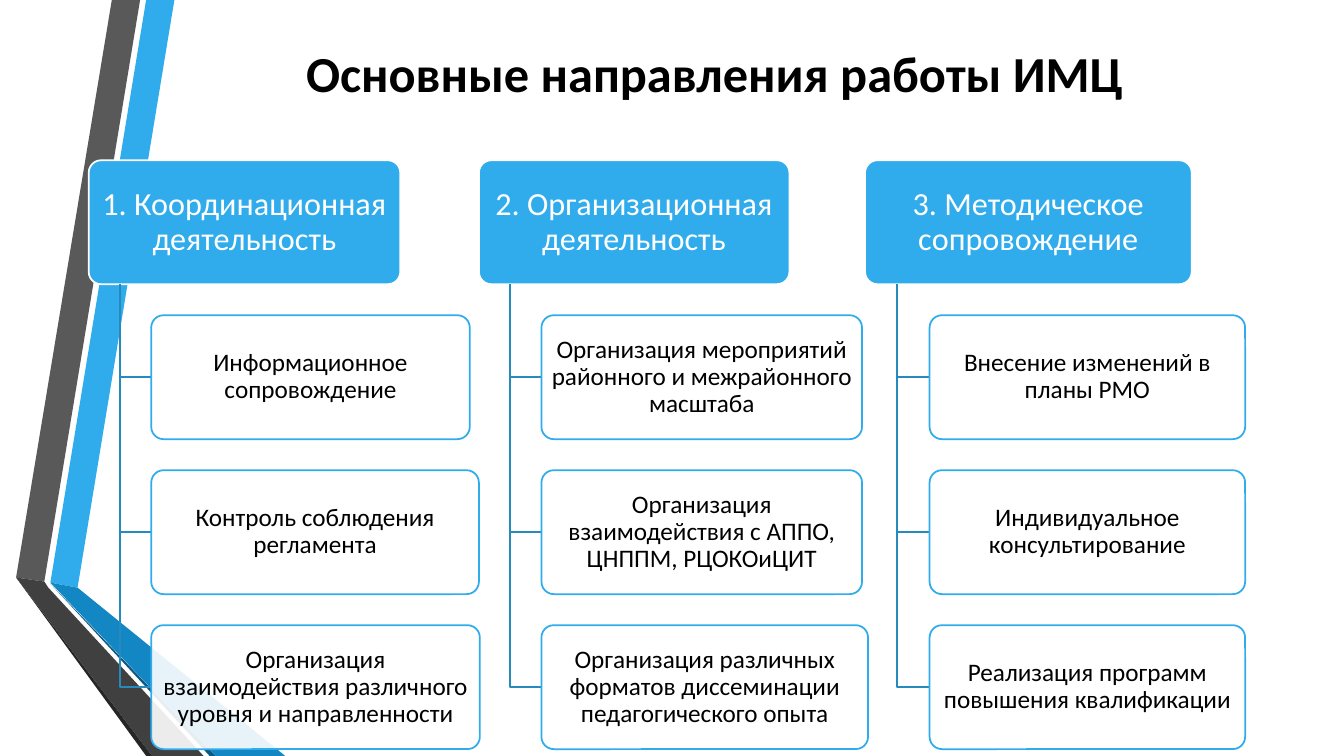
import pptx
import pptx.util
import pptx.dml.color
import pptx.enum.shapes
import pptx.enum.text
import pptx.oxml
import pptx.oxml.ns
from dataclasses import dataclass
from lxml import etree

Inches = pptx.util.Inches
Pt = pptx.util.Pt


@dataclass(frozen=True)
class Theme:
    font: str = "Calibri"
    title_size: int = 36
    heading_size: int = 23
    task_size: int = 18
    line_width: float = 1.25
    black: str = "000000"
    white: str = "FFFFFF"
    blue: str = "30ACEC"
    blue_dark: str = "1287C3"
    blue_deep: str = "0C5A82"
    branch: str = "268ABD"
    gray: str = "595959"
    gray_dark: str = "404040"
    gray_deep: str = "262626"


theme = Theme()
rgb = pptx.dml.color.RGBColor.from_string

deck = pptx.Presentation()
deck.slide_width, deck.slide_height = Inches(13.33), Inches(7.5)
slide = deck.slides.add_slide(deck.slide_layouts[6])


def add_outline(points, closed):
    corners = [(Inches(x), Inches(y)) for x, y in points]
    builder = slide.shapes.build_freeform(*corners[0], scale=1.0)
    builder.add_line_segments(corners[1:], close=closed)
    outline = builder.convert_to_shape()
    outline.shadow.inherit = False
    return outline


def add_card(left, top, width, text, size, fill, line, color, inset):
    card = slide.shapes.add_shape(
        pptx.enum.shapes.MSO_SHAPE.ROUNDED_RECTANGLE,
        Inches(left), Inches(top), Inches(width), Inches(card_height))
    card.adjustments[0] = 0.1
    card.shadow.inherit = False
    card.fill.solid()
    card.fill.fore_color.rgb = rgb(fill)
    card.line.color.rgb = rgb(line)
    card.line.width = Pt(theme.line_width)
    frame = card.text_frame
    frame.word_wrap = True
    frame.vertical_anchor = pptx.enum.text.MSO_ANCHOR.MIDDLE
    frame.margin_left = frame.margin_right = Inches(inset)
    frame.margin_top = frame.margin_bottom = Inches(0.03)
    label = frame.paragraphs[0]
    label.text = text
    label.alignment = pptx.enum.text.PP_ALIGN.CENTER
    label.line_spacing = 0.9
    label.font.name, label.font.size = theme.font, Pt(size)
    label.font.color.rgb = rgb(color)
    return card


# Folded ribbons along the left edge
ribbons = [
    (theme.blue, [(0.5, 5.78), (0.77, 5.83), (1.73, 0), (1.45, 0)]),
    (theme.gray, [(1.39, 0), (1.11, 0), (0.16, 5.73), (0.44, 5.77)]),
    (theme.gray_deep, [(0.16, 5.73), (1.45, 7.5), (1.51, 7.5)]),
    (theme.blue_deep, [(0.5, 5.79), (2.08, 7.5), (2.14, 7.5)]),
    (theme.blue_dark, [(0.5, 5.78), (2.14, 7.5), (2.83, 7.5), (0.77, 5.83)]),
    (theme.gray_dark, [(2.02, 7.5), (0.48, 5.83), (0.44, 5.77),
                       (0.16, 5.73), (1.51, 7.5)]),
]
for ribbon_color, ribbon_points in ribbons:
    ribbon = add_outline(ribbon_points, True)
    ribbon.fill.solid()
    ribbon.fill.fore_color.rgb = rgb(ribbon_color)
    ribbon.line.fill.background()

# Title
title = slide.shapes.add_textbox(
    Inches(1.61), Inches(0.13), Inches(10.96), Inches(1.18)).text_frame
title.word_wrap = True
title.vertical_anchor = pptx.enum.text.MSO_ANCHOR.MIDDLE
heading = title.paragraphs[0]
heading.text = "Основные направления работы ИМЦ"
heading.alignment = pptx.enum.text.PP_ALIGN.CENTER
heading.font.name, heading.font.size = theme.font, Pt(theme.title_size)
heading.font.bold = True
heading.font.color.rgb = rgb(theme.black)

# Three directions: left edge, width, trunk x, task x, heading, tasks with widths
directions = [
    (0.88, 3.09, 1.19, 1.5, "1. Координационная деятельность", [
        ("Информационное сопровождение", 3.16),
        ("Контроль соблюдения регламента", 3.25),
        ("Организация взаимодействия различного уровня и направленности", 3.26)]),
    (4.75, 3.08, 5.06, 5.37, "2. Организационная деятельность", [
        ("Организация мероприятий районного и межрайонного масштаба", 3.18),
        ("Организация взаимодействия с АППО, ЦНППМ, РЦОКОиЦИТ", 3.18),
        ("Организация различных форматов диссеминации педагогического опыта", 3.24)]),
    (8.58, 3.24, 8.9, 9.22, "3. Методическое сопровождение", [
        ("Внесение изменений в планы РМО", 3.13),
        ("Индивидуальное консультирование", 3.13),
        ("Реализация программ повышения квалификации", 3.13)]),
]
card_height = 1.23
direction_top = 1.59
row_step = card_height * 1.25

for left, width, trunk_x, task_x, direction, tasks in directions:
    add_card(left, direction_top, width, direction, theme.heading_size,
             theme.blue, theme.white, theme.white, 0.05)
    for row, (task, task_width) in enumerate(tasks, start=1):
        task_top = direction_top + row * row_step
        task_middle = task_top + card_height / 2

        # Branch from the heading down to the task
        branch = add_outline([(trunk_x, direction_top + card_height),
                              (trunk_x, task_middle), (task_x, task_middle)], False)
        branch.fill.background()
        branch.line.color.rgb = rgb(theme.branch)
        branch.line.width = Pt(theme.line_width)

        # Task card, slightly see-through
        card = add_card(task_x, task_top, task_width, task, theme.task_size,
                        theme.white, theme.blue, theme.black, 0.04)
        tint = card.fill._xPr.find(".//" + pptx.oxml.ns.qn("a:srgbClr"))
        etree.SubElement(tint, pptx.oxml.ns.qn("a:alpha"), val="90000")

deck.save("out.pptx")
